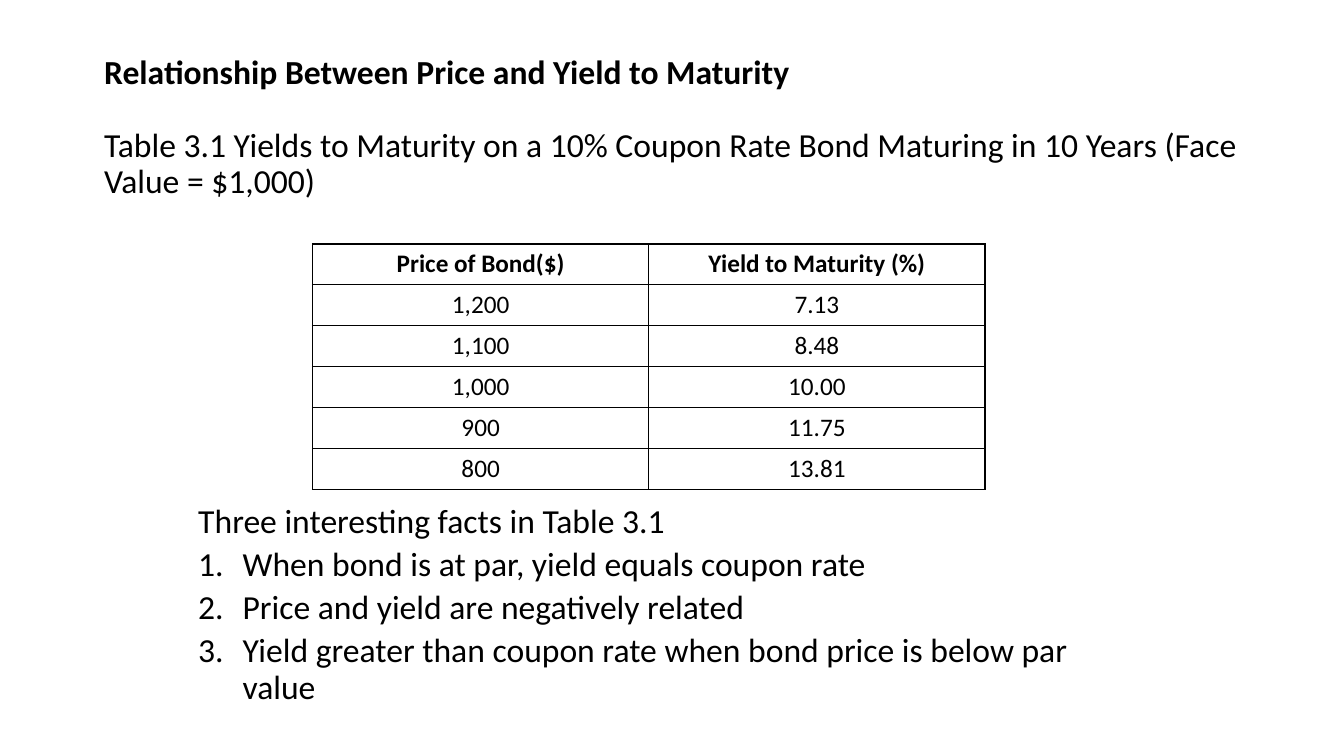
from lxml import etree
from pptx import Presentation, util as u
from pptx.dml.color import RGBColor
from pptx.enum import text
from pptx.oxml import ns

BLACK = RGBColor(0, 0, 0)
FONT = "Calibri"
WIDTH, HEIGHT = u.Inches(13.33), u.Inches(7.5)

HEADING = "Relationship Between Price and Yield to Maturity"
CAPTION = ("Table 3.1 Yields to Maturity on a 10% Coupon Rate Bond "
           "Maturing in 10 Years (Face Value = $1,000)")
YIELDS = [
    ("Price of Bond($)", "Yield to Maturity (%)"),
    ("1,200", "7.13"),
    ("1,100", "8.48"),
    ("1,000", "10.00"),
    ("900", "11.75"),
    ("800", "13.81"),
]
FACTS_INTRO = "Three interesting facts in Table 3.1"
FACTS = [
    "When bond is at par, yield equals coupon rate",
    "Price and yield are negatively related",
    "Yield greater than coupon rate when bond price is below par value",
]


def apply(target, values):
    for name, value in values.items():
        setattr(target, name, value)


def share(left, top, width, height):
    return [int(WIDTH * left), int(HEIGHT * top),
            int(WIDTH * width), int(HEIGHT * height)]


def place(sp, box, anchor):
    apply(sp, dict(zip(("left", "top", "width", "height"), box)))
    tf = sp.text_frame
    apply(tf, {"word_wrap": True, "vertical_anchor": anchor,
               "auto_size": text.MSO_AUTO_SIZE.NONE})
    return tf


def write(p, words, size, bold=False, **layout):
    r = p.add_run()
    r.text = words
    apply(r.font, {"name": FONT, "size": u.Pt(size), "bold": bold})
    r.font.color.rgb = BLACK
    apply(p, layout)


def set_bullet(p, indent, tag, **attrs):
    pPr = p._p.get_or_add_pPr()
    pPr.set("marL", str(indent))
    pPr.set("indent", str(-indent))
    etree.SubElement(pPr, ns.qn(tag), attrs)


def add_border(cell):
    tcPr = cell._tc.get_or_add_tcPr()
    for i, side in enumerate(("a:lnL", "a:lnR", "a:lnT", "a:lnB")):
        ln = etree.Element(ns.qn(side), w=str(u.Pt(1)))
        fill = etree.SubElement(ln, ns.qn("a:solidFill"))
        etree.SubElement(fill, ns.qn("a:srgbClr"), val=str(BLACK))
        tcPr.insert(i, ln)


def add_title(s, box):
    tf = place(s.shapes.title, box, text.MSO_ANCHOR.MIDDLE)
    layout = {"alignment": text.PP_ALIGN.LEFT, "line_spacing": 0.9}
    write(tf.paragraphs[0], HEADING, 24, True, **layout)
    write(tf.add_paragraph(), CAPTION, 24, space_before=u.Pt(26), **layout)


def add_yields(s, box):
    table = s.shapes.add_table(len(YIELDS), len(YIELDS[0]), *box).table
    apply(table, {"first_row": False, "horz_banding": False})
    for row, values in enumerate(YIELDS):
        for col, value in enumerate(values):
            cell = table.cell(row, col)
            cell.fill.background()
            add_border(cell)
            write(cell.text_frame.paragraphs[0], value, 18, row == 0,
                  alignment=text.PP_ALIGN.CENTER)


def add_facts(s, box):
    tf = place(s.placeholders[1], box, text.MSO_ANCHOR.TOP)
    p = tf.paragraphs[0]
    write(p, FACTS_INTRO, 24, line_spacing=0.9, space_before=u.Pt(10))
    set_bullet(p, 0, "a:buNone")
    for fact in FACTS:
        p = tf.add_paragraph()
        write(p, fact, 24, level=1, line_spacing=0.9, space_before=u.Pt(5))
        set_bullet(p, u.Inches(0.44), "a:buAutoNum", type="arabicPeriod")


def main():
    prs = Presentation()
    apply(prs, {"slide_width": WIDTH, "slide_height": HEIGHT})
    s = prs.slides.add_slide(prs.slide_layouts[1])
    add_title(s, share(0.07, 0.05, 0.86, 0.24))
    add_yields(s, [u.Inches(n) for n in (3.1, 2.42, 6.67, 2.43)])
    add_facts(s, share(0.14, 0.66, 0.68, 0.29))
    prs.save("out.pptx")


if __name__ == "__main__":
    main()
